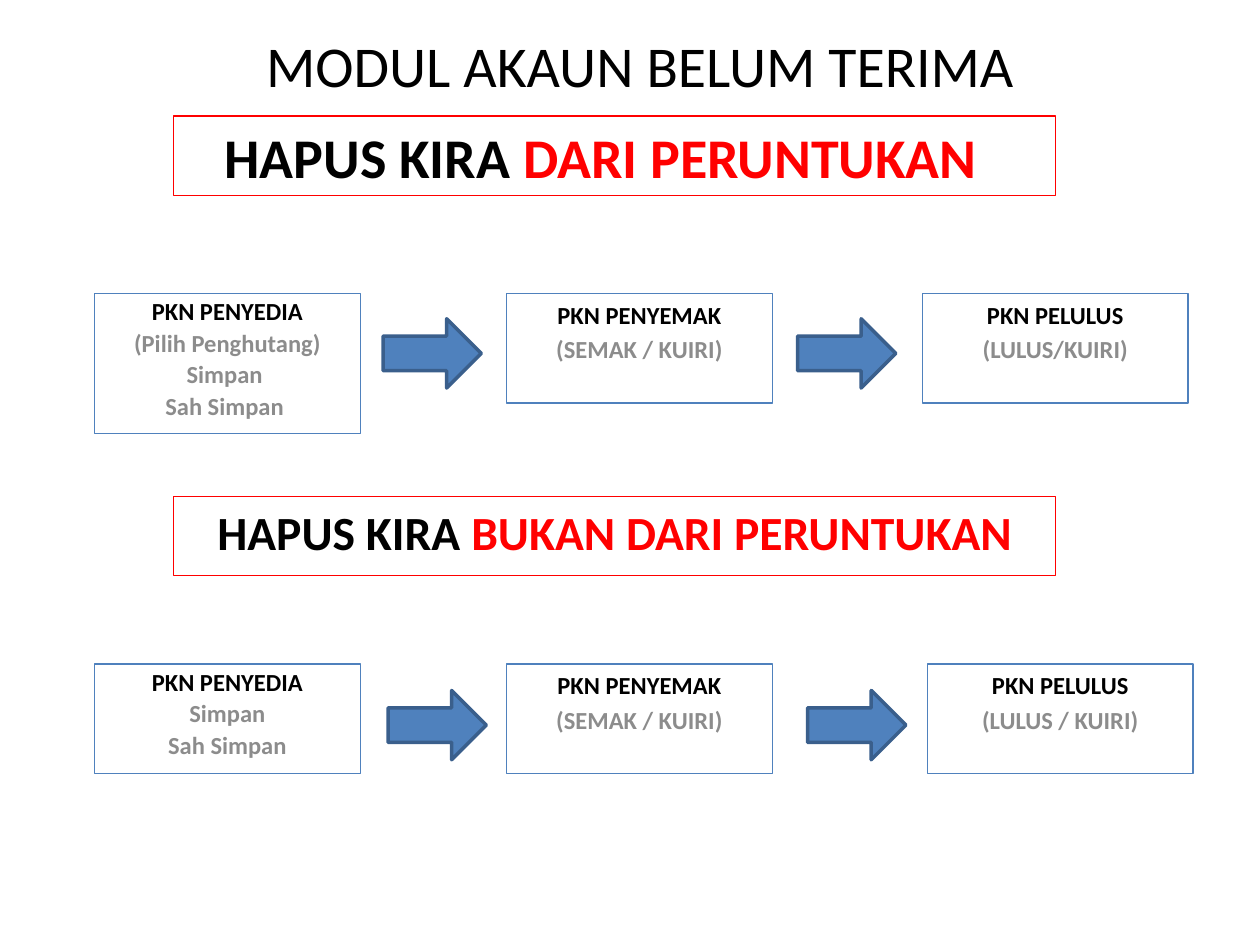
from pptx import Presentation
from pptx.dml.color import RGBColor
from pptx.enum.shapes import MSO_SHAPE as Shape
from pptx.enum.text import MSO_ANCHOR as Anchor, PP_ALIGN as Align
from pptx.util import Inches, Pt

BLACK, RED, GREY, BLUE, DARK_BLUE = "000000", "FF0000", "8C8C8C", "4F81BD", "3A5F8C"


def rgb(color):
    return RGBColor.from_string(color)


def add_box(left, top, width, height, border, paragraphs, size, line_spacing=1.0):
    """Add an outlined box; each paragraph is a list of (text, colour) runs."""
    box = slide.shapes.add_shape(
        Shape.RECTANGLE, Inches(left), Inches(top), Inches(width), Inches(height))
    box.shadow.inherit = False
    box.fill.background()
    box.line.color.rgb = rgb(border)
    box.line.width = Pt(0.75)
    frame = box.text_frame
    frame.word_wrap = True
    frame.vertical_anchor = Anchor.TOP
    for index, runs in enumerate(paragraphs):
        paragraph = frame.add_paragraph() if index else frame.paragraphs[0]
        paragraph.alignment = Align.CENTER
        paragraph.line_spacing = line_spacing
        paragraph.space_before = Pt(round(size * 0.2, 1))
        for text, color in runs:
            run = paragraph.add_run()
            run.text = text
            run.font.name = "Calibri"
            run.font.size = Pt(size)
            run.font.bold = True
            run.font.color.rgb = rgb(color)
    return box


prs = Presentation()
prs.slide_width, prs.slide_height = Inches(10), Inches(7.5)
slide = prs.slides.add_slide(prs.slide_layouts[5])

title = slide.shapes.title
title.left, title.top = Inches(0.83), Inches(0.29)
title.width, title.height = Inches(8.5), Inches(0.55)
title.text_frame.text = "MODUL AKAUN BELUM TERIMA"
title.text_frame.vertical_anchor = Anchor.MIDDLE
heading = title.text_frame.paragraphs[0]
heading.alignment = Align.CENTER
heading.line_spacing = 0.8
heading.runs[0].font.name = "Calibri"
heading.runs[0].font.size = Pt(33)
heading.runs[0].font.color.rgb = rgb(BLACK)

# Section headings: top, source of the write-off, text size, right margin
for top, source, size, right_margin in [
    (0.92, "DARI PERUNTUKAN", 32, 0.32),
    (3.94, "BUKAN DARI PERUNTUKAN", 27.2, 0.1),
]:
    section = add_box(1.38, top, 7, 0.63, RED,
                      [[("HAPUS KIRA ", BLACK), (source, RED)]], size)
    section.text_frame.margin_right = Inches(right_margin)

# Steps of each flow: left, top, height, line spacing, role, actions
for left, top, height, line_spacing, role, actions in [
    (0.75, 2.33, 1.11, 0.9, "PKN PENYEDIA",
     ["(Pilih Penghutang)", "Simpan ", "Sah Simpan "]),
    (4.02, 2.33, 0.87, 1.0, "PKN PENYEMAK", ["(SEMAK / KUIRI)"]),
    (7.32, 2.33, 0.87, 1.0, "PKN PELULUS", ["(LULUS/KUIRI)"]),
    (0.75, 5.27, 0.87, 0.9, "PKN PENYEDIA", ["Simpan", "Sah Simpan"]),
    (4.02, 5.27, 0.87, 1.0, "PKN PENYEMAK", ["(SEMAK / KUIRI)"]),
    (7.36, 5.27, 0.87, 1.0, "PKN PELULUS", ["(LULUS / KUIRI)"]),
]:
    lines = [[(role, BLACK)]] + [[(action, GREY)] for action in actions]
    add_box(left, top, 2.11, height, BLUE, lines, 14, line_spacing)

for left, top in [(3.04, 2.53), (6.33, 2.53), (3.08, 5.48), (6.41, 5.48)]:
    arrow = slide.shapes.add_shape(
        Shape.RIGHT_ARROW, Inches(left), Inches(top), Inches(0.78), Inches(0.55))
    arrow.shadow.inherit = False
    arrow.fill.solid()
    arrow.fill.fore_color.rgb = rgb(BLUE)
    arrow.line.color.rgb = rgb(DARK_BLUE)
    arrow.line.width = Pt(2)

prs.save("out.pptx")
